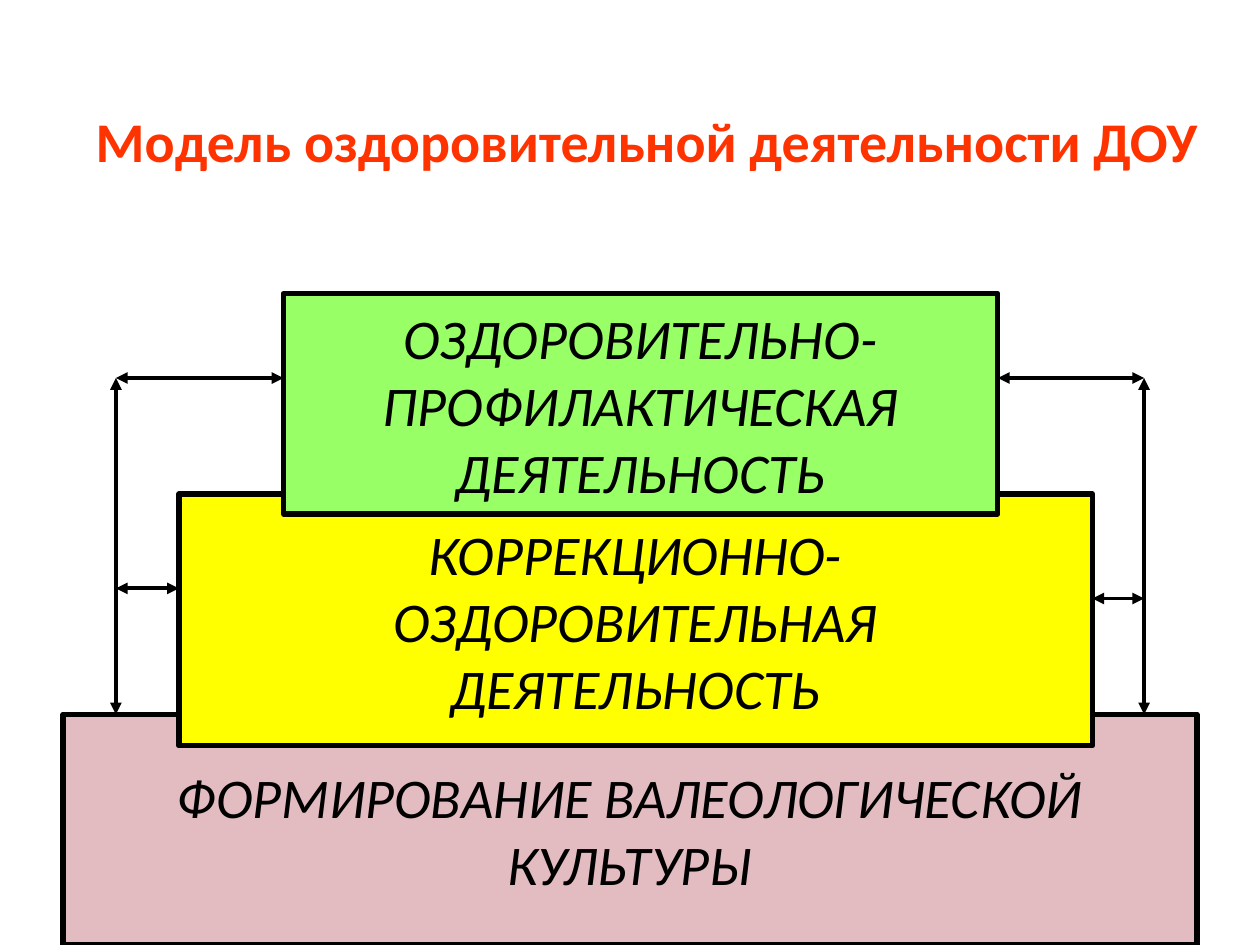
from lxml.etree import SubElement
from pptx import Presentation
from pptx.dml.color import RGBColor
from pptx.enum.shapes import MSO_CONNECTOR, MSO_SHAPE
from pptx.enum.text import MSO_ANCHOR, PP_ALIGN
from pptx.oxml.ns import qn
from pptx.util import Inches, Pt

BLACK = RGBColor(0x00, 0x00, 0x00)
ORANGE = RGBColor(0xFF, 0x33, 0x00)
PINK = RGBColor(0xE2, 0xBC, 0xC0)
YELLOW = RGBColor(0xFF, 0xFF, 0x00)
GREEN = RGBColor(0x99, 0xFF, 0x66)

LEFT_RAIL, RIGHT_RAIL = 0.92, 9.08
RAIL_TOP, RAIL_BOTTOM = 3, 5.67


class PyramidSlide:
    font_name = "Calibri"
    font_size = Pt(32)
    border_width = Pt(3)
    arrow_width = Pt(2.25)

    def __init__(self, slide):
        self.slide = slide

    def format_text(self, frame, color, bold=False, italic=False):
        frame.vertical_anchor = MSO_ANCHOR.MIDDLE
        for paragraph in frame.paragraphs:
            paragraph.alignment = PP_ALIGN.CENTER
            for run in paragraph.runs:
                font = run.font
                font.name, font.size = self.font_name, self.font_size
                font.bold, font.italic = bold, italic
                font.color.rgb = color

    def title(self, text, left, top, width, height):
        heading = self.slide.shapes.title
        heading.left, heading.top = Inches(left), Inches(top)
        heading.width, heading.height = Inches(width), Inches(height)
        heading.text_frame.text = text
        self.format_text(heading.text_frame, ORANGE, bold=True)

    def tier(self, text, fill, left, top, width, height):
        block = self.slide.shapes.add_shape(
            MSO_SHAPE.RECTANGLE,
            Inches(left), Inches(top), Inches(width), Inches(height))
        block.shadow.inherit = False
        block.fill.solid()
        block.fill.fore_color.rgb = fill
        block.line.color.rgb = BLACK
        block.line.width = self.border_width
        block.text_frame.text = text
        block.text_frame.word_wrap = False
        self.format_text(block.text_frame, BLACK, italic=True)

    def double_arrow(self, x1, y1, x2, y2):
        arrow = self.slide.shapes.add_connector(
            MSO_CONNECTOR.STRAIGHT,
            Inches(x1), Inches(y1), Inches(x2), Inches(y2))
        arrow.line.color.rgb = BLACK
        arrow.line.width = self.arrow_width
        outline = arrow.line._get_or_add_ln()
        for end in ("a:headEnd", "a:tailEnd"):
            SubElement(outline, qn(end), type="triangle")
        SubElement(arrow._element.spPr, qn("a:effectLst"))


def main():
    prs = Presentation()
    prs.slide_width, prs.slide_height = Inches(10), Inches(7.5)
    pyramid = PyramidSlide(prs.slides.add_slide(prs.slide_layouts[5]))

    pyramid.title("Модель оздоровительной деятельности ДОУ", 0.5, 0.3, 9.27, 1.62)

    pyramid.tier("ФОРМИРОВАНИЕ ВАЛЕОЛОГИЧЕСКОЙ\nКУЛЬТУРЫ",
                 PINK, 0.5, RAIL_BOTTOM, 9, 1.83)
    pyramid.tier("КОРРЕКЦИОННО-\nОЗДОРОВИТЕЛЬНАЯ\nДЕЯТЕЛЬНОСТЬ",
                 YELLOW, 1.42, 3.92, 7.25, 2)
    pyramid.tier("ОЗДОРОВИТЕЛЬНО-\nПРОФИЛАКТИЧЕСКАЯ\nДЕЯТЕЛЬНОСТЬ",
                 GREEN, 2.25, 2.33, 5.67, 1.75)

    # Each rail has an arrow to the top tier and one to the middle tier.
    for rail, top_edge, middle_edge, middle_y in (
            (RIGHT_RAIL, 7.92, 8.67, 4.75),
            (LEFT_RAIL, 2.25, 1.42, 4.67)):
        pyramid.double_arrow(top_edge, RAIL_TOP, rail, RAIL_TOP)
        pyramid.double_arrow(rail, RAIL_TOP, rail, RAIL_BOTTOM)
        pyramid.double_arrow(middle_edge, middle_y, rail, middle_y)

    prs.save("out.pptx")


if __name__ == "__main__":
    main()
